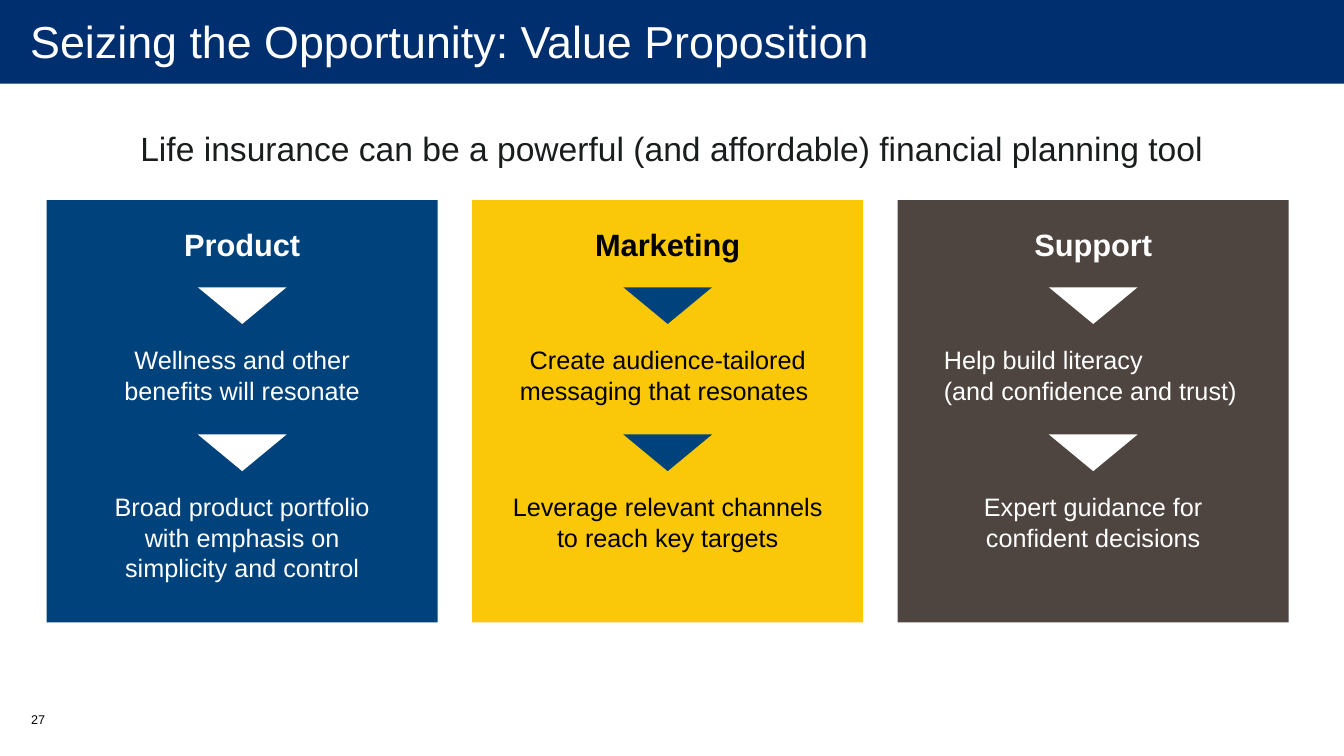
from dataclasses import dataclass

from pptx import Presentation
from pptx.dml.color import RGBColor
from pptx.enum.shapes import MSO_SHAPE
from pptx.enum.text import MSO_ANCHOR, PP_ALIGN
from pptx.util import Inches, Pt

RECT = MSO_SHAPE.RECTANGLE
TRIANGLE = MSO_SHAPE.ISOSCELES_TRIANGLE
LEFT, CENTER = PP_ALIGN.LEFT, PP_ALIGN.CENTER
TOP, MIDDLE = MSO_ANCHOR.TOP, MSO_ANCHOR.MIDDLE

WIDTH, HEIGHT = Inches(13.33), Inches(7.5)
COLORS = {
    "navy": "002F70",
    "blue": "00437C",
    "yellow": "FAC809",
    "brown": "4E4540",
    "white": "FFFFFF",
    "black": "000000",
    "ink": "1A1D1E",
}


@dataclass
class Box:
    """Position and size in percent of the slide."""
    left: float
    top: float
    width: float
    height: float

    def emu(self) -> tuple[int, int, int, int]:
        return (int(WIDTH * self.left / 100), int(HEIGHT * self.top / 100),
                int(WIDTH * self.width / 100), int(HEIGHT * self.height / 100))


@dataclass
class Step:
    text: str
    width: float = 21.68
    align: PP_ALIGN = CENTER


@dataclass
class Card:
    heading: str
    fill: str
    text_color: str
    arrow: str
    steps: list[Step]


CARD_LEFT, CARD_TOP, CARD_WIDTH, CARD_HEIGHT = 3.47, 26.47, 29.1, 55.87
CARD_PITCH = 31.66
HEADING_TOP, HEADING_HEIGHT = 29.2, 6.27
ARROW_TOP, ARROW_WIDTH, ARROW_HEIGHT = 38, 6.6, 4.85
STEP_TOP, STEP_HEIGHT, STEP_PITCH = 44.93, 9.47, 19.47

CARDS = [
    Card("Product", "blue", "white", "white", [
        Step("Wellness and other benefits will resonate"),
        Step("Broad product portfolio with emphasis on simplicity and control"),
    ]),
    Card("Marketing", "yellow", "black", "blue", [
        Step("Create audience-tailored messaging that resonates ", 23.55),
        Step("Leverage relevant channels to reach key targets", 25.43),
    ]),
    Card("Support", "brown", "white", "white", [
        Step("Help build literacy\n(and confidence and trust)", 23.7, LEFT),
        Step("Expert guidance for confident decisions"),
    ]),
]


def add_block(s, kind: MSO_SHAPE, box: Box, color: str, rotation: int = 0) -> None:
    sp = s.shapes.add_shape(kind, *box.emu())
    sp.shadow.inherit = False
    sp.fill.solid()
    sp.fill.fore_color.rgb = RGBColor.from_string(COLORS[color])
    sp.line.fill.background()
    sp.rotation = rotation


def add_text(s, box: Box, text: str, size: int, color: str,
             align: PP_ALIGN = CENTER, bold: bool = False,
             anchor: MSO_ANCHOR = TOP):
    tf = s.shapes.add_textbox(*box.emu()).text_frame
    tf.word_wrap = True
    tf.vertical_anchor = anchor
    p = tf.paragraphs[0]
    p.alignment = align
    for i, line in enumerate(text.split("\n")):
        if i:
            p.add_line_break()
        r = p.add_run()
        r.text = line
        r.font.name = "Arial"
        r.font.size = Pt(size)
        r.font.bold = bold
        r.font.color.rgb = RGBColor.from_string(COLORS[color])
    return tf


def add_card(s, card: Card, column: int) -> None:
    left = CARD_LEFT + column * CARD_PITCH
    center = left + CARD_WIDTH / 2
    add_block(s, RECT, Box(left, CARD_TOP, CARD_WIDTH, CARD_HEIGHT), card.fill)
    add_text(s, Box(left, HEADING_TOP, CARD_WIDTH, HEADING_HEIGHT),
             card.heading, 22, card.text_color, bold=True)
    for row, step in enumerate(card.steps):
        offset = row * STEP_PITCH
        add_block(s, TRIANGLE,
                  Box(center - ARROW_WIDTH / 2, ARROW_TOP + offset,
                      ARROW_WIDTH, ARROW_HEIGHT), card.arrow, 180)
        add_text(s, Box(center - step.width / 2, STEP_TOP + offset,
                        step.width, STEP_HEIGHT),
                 step.text, 18, card.text_color, step.align)


def main() -> None:
    prs = Presentation()
    prs.slide_width, prs.slide_height = WIDTH, HEIGHT
    s = prs.slides.add_slide(prs.slide_layouts[6])

    add_block(s, RECT, Box(0, 0, 100, 11.07), "navy")
    tf = add_text(s, Box(0, 0, 100, 10.8),
                  "Seizing the Opportunity: Value Proposition",
                  32, "white", LEFT, anchor=MIDDLE)
    tf.margin_left, tf.margin_right = Inches(0.3), Inches(0.2)
    tf.margin_top = tf.margin_bottom = 0
    add_text(s, Box(7.28, 16.27, 85.37, 6.67),
             "Life insurance can be a powerful (and affordable) "
             "financial planning tool", 24, "ink")

    for column, card in enumerate(CARDS):
        add_card(s, card, column)

    add_text(s, Box(1.58, 93.47, 3.68, 5.33), "27", 9, "black", LEFT)
    prs.save("out.pptx")


if __name__ == "__main__":
    main()
